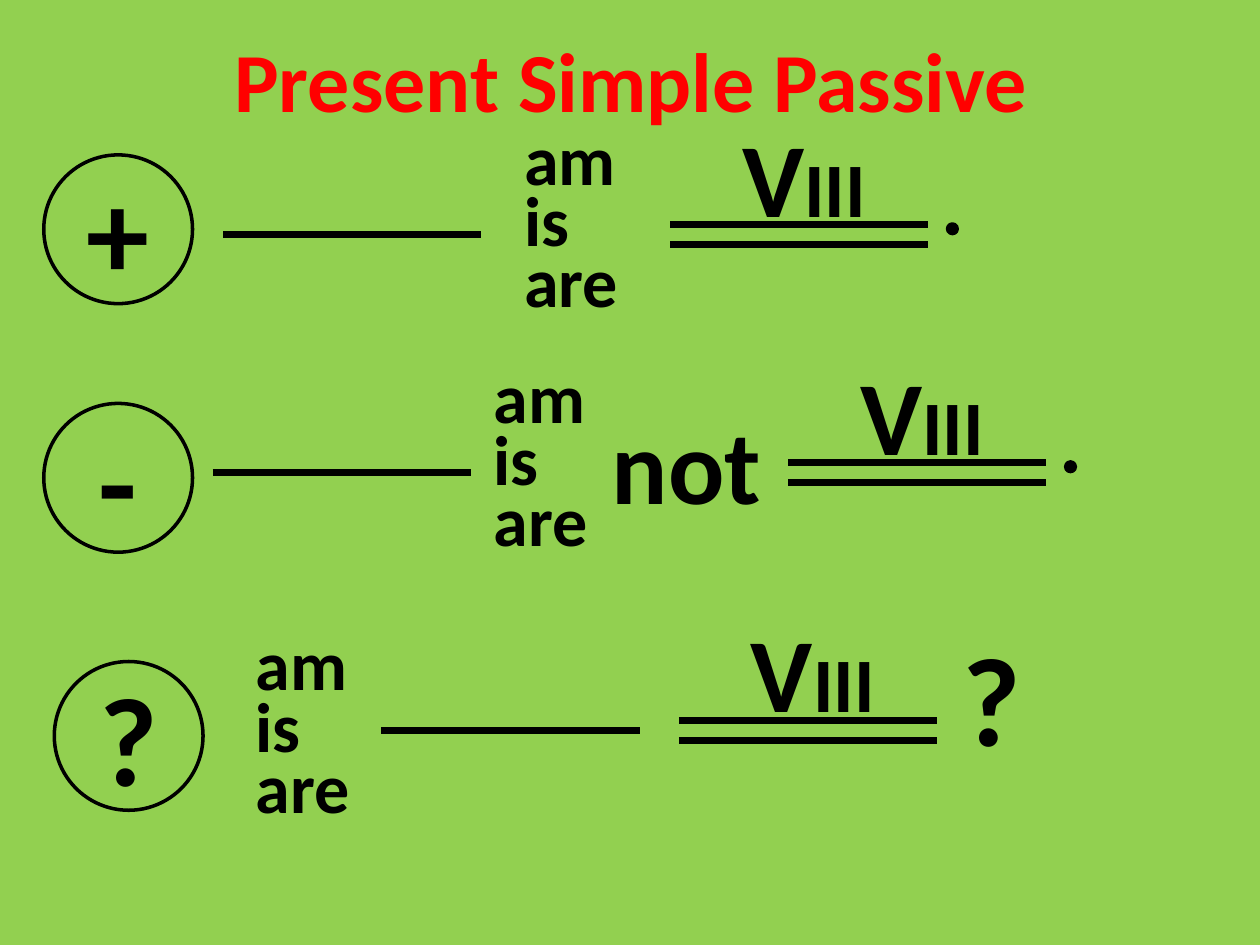
"""Build the Present Simple Passive sentence-pattern slide."""
from pptx import Presentation
from pptx import util as u
from pptx.dml.color import RGBColor
from pptx.enum import shapes, text
from pptx.oxml.ns import qn
from lxml import etree

Pt = u.Pt
GREEN = RGBColor(0x92, 0xD0, 0x50)
RED = RGBColor(0xFF, 0, 0)
BLACK = RGBColor(0, 0, 0)
CENTER = text.PP_ALIGN.CENTER
CIRCLE = 85
BLANK = 147.5

deck = Presentation()
deck.slide_width, deck.slide_height = Pt(720), Pt(540)
slide = deck.slides.add_slide(deck.slide_layouts[5])
slide.background.fill.solid()
slide.background.fill.fore_color.rgb = GREEN


def write(holder, lines, size, align=None, spacing=None, color=BLACK):
    frame = holder.text_frame
    frame.word_wrap = True
    frame.vertical_anchor = text.MSO_ANCHOR.MIDDLE
    frame.text = "\n".join(lines)
    for paragraph in frame.paragraphs:
        paragraph.alignment = align
        paragraph.line_spacing = spacing
        font = paragraph.font
        font.name, font.size, font.bold = "Calibri", Pt(size), True
        font.color.rgb = color
    return frame


def rule(left, top):
    line = slide.shapes.add_connector(
        shapes.MSO_CONNECTOR.STRAIGHT, Pt(left), Pt(top), Pt(left + BLANK), Pt(top))
    line.line.color.rgb = BLACK
    line.line.width = Pt(4)
    etree.SubElement(line._element.spPr, qn("a:effectLst"))


title = slide.shapes.title
title.left, title.top, title.width, title.height = Pt(36.5), Pt(0), Pt(648), Pt(90)
write(title, ["Present Simple Passive"], 48, CENTER, color=RED)

patterns = [
    ("+", (25, 88.5), (127.5, 134), (292.5, 66), (377.5, 60.5)),
    ("-", (25, 230.5), (121.5, 270), (275, 202.5), (445, 196.5)),
    ("?", (31, 378), (218, 417.5), (139, 355), (382.5, 343.5)),
]
signs = [(sign, place, True) for sign, place, *_ in patterns]
signs.append(("?", (524, 355), False))

for sign, (left, top), outlined in signs:
    circle = slide.shapes.add_shape(
        shapes.MSO_SHAPE.OVAL, Pt(left), Pt(top), Pt(CIRCLE), Pt(CIRCLE))
    circle.shadow.inherit = False
    circle.fill.background()
    if outlined:
        circle.line.color.rgb = BLACK
        circle.line.width = Pt(2)
    else:
        circle.line.fill.background()
    write(circle, [sign], 72, CENTER)

for sign, _, subject, (verb_left, verb_top), (form_left, form_top) in patterns:
    rule(*subject)
    verbs = slide.shapes.add_textbox(Pt(verb_left), Pt(verb_top), Pt(175.5), Pt(130.5))
    write(verbs, ["am", "is", "are"], 40, spacing=Pt(35))

    participle = slide.shapes.add_textbox(Pt(form_left), Pt(form_top), Pt(164), Pt(79))
    third_form = write(participle, ["V"], 60, CENTER).paragraphs[0].add_run()
    third_form.text = "III"
    third_form.font.size = Pt(44)
    for drop in (68, 79.5):
        rule(form_left + 5.5, form_top + drop)

    if sign != "?":
        full_stop = slide.shapes.add_shape(
            shapes.MSO_SHAPE.OVAL, Pt(form_left + 164), Pt(form_top + 67.5), Pt(5.5), Pt(5.5))
        full_stop.shadow.inherit = False
        full_stop.fill.solid()
        full_stop.fill.fore_color.rgb = BLACK
        full_stop.line.color.rgb = BLACK
        full_stop.line.width = Pt(2)

negation = slide.shapes.add_textbox(Pt(342.5), Pt(224.5), Pt(164), Pt(79))
write(negation, ["not"], 60)

deck.save("out.pptx")
